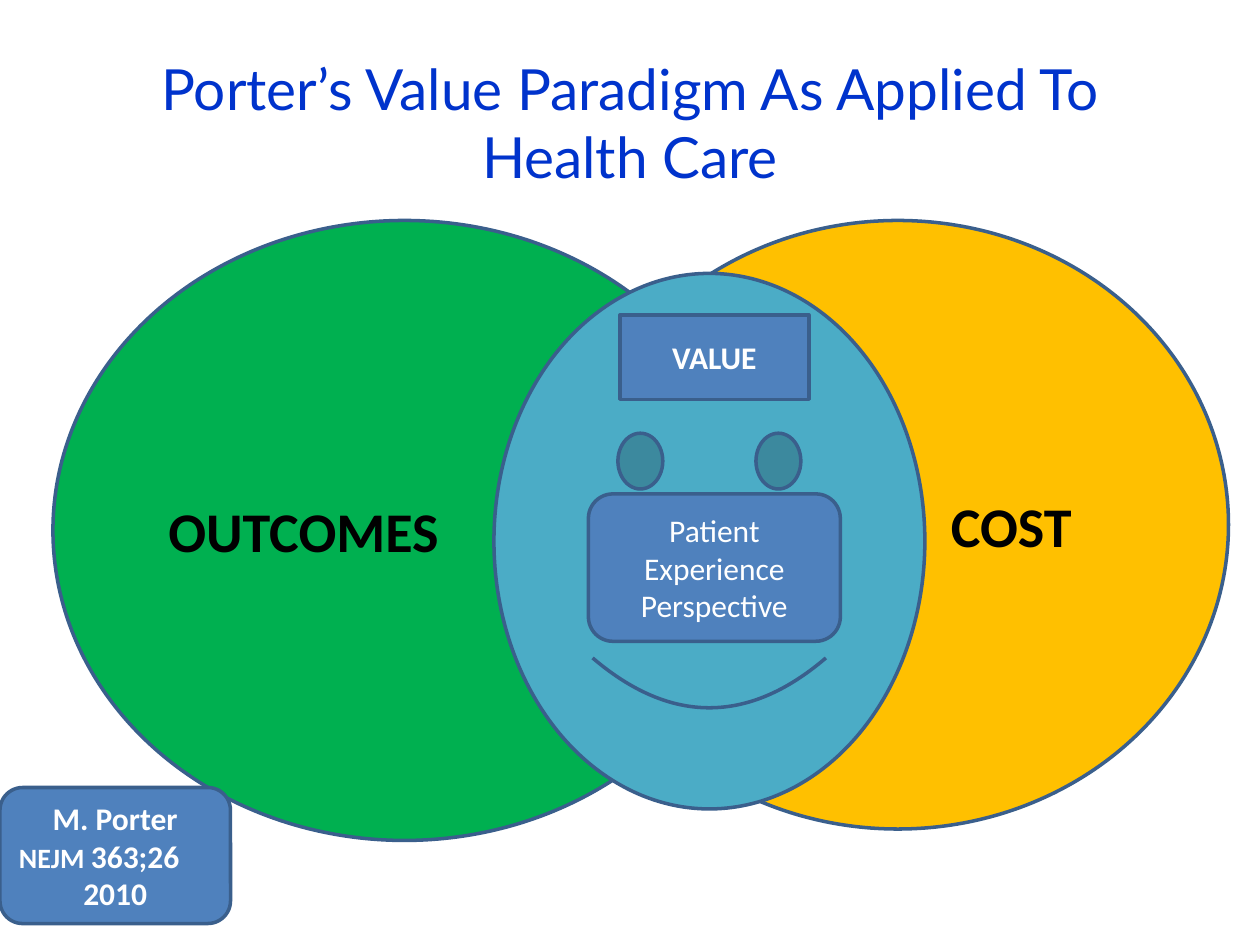
from pptx import Presentation
from pptx.dml.color import RGBColor
from pptx.enum.shapes import MSO_SHAPE
from pptx.enum.text import MSO_ANCHOR, PP_ALIGN
from pptx.util import Inches, Pt

OVAL = MSO_SHAPE.OVAL
FACE = MSO_SHAPE.SMILEY_FACE
RECTANGLE = MSO_SHAPE.RECTANGLE
ROUNDED = MSO_SHAPE.ROUNDED_RECTANGLE
LEFT, CENTER = PP_ALIGN.LEFT, PP_ALIGN.CENTER
MIDDLE = MSO_ANCHOR.MIDDLE

BLUE, OUTLINE, WHITE, BLACK = "4F81BD", "3A5F8C", "FFFFFF", "000000"


def color(value):
    return RGBColor.from_string(value)


def add_figure(page, kind, place, fill):
    figure = page.shapes.add_shape(kind, *map(Inches, place))
    figure.shadow.inherit = False
    figure.fill.solid()
    figure.fill.fore_color.rgb = color(fill)
    figure.line.color.rgb = color(OUTLINE)
    figure.line.width = Pt(2)
    return figure


def write(shape, lines, size, ink, bold=False, align=CENTER, font="Calibri"):
    frame = shape.text_frame
    frame.word_wrap = True
    frame.vertical_anchor = MIDDLE
    frame.text = "\n".join(lines)
    for para in frame.paragraphs:
        para.alignment = align
        para.font.name = font
        para.font.size = Pt(size)
        para.font.bold = bold
        para.font.color.rgb = color(ink)
    return frame


def add_title(page, text):
    box = page.shapes.add_textbox(*map(Inches, (0.5, 0.33, 9, 1.27)))
    write(box, [text], 32.4, "0033CC", font="Lato")


def add_circles(page):
    outcomes = add_figure(page, OVAL, (0.42, 1.75, 5.58, 4.92), "00B050")
    write(outcomes, ["OUTCOMES"], 32, BLACK, bold=True, align=LEFT)
    cost = add_figure(page, OVAL, (4.5, 1.75, 5.25, 4.83), "FFC000")
    frame = write(cost, ["COST"], 32, BLACK, bold=True)
    frame.margin_left = Inches(1.9)


def add_face(page):
    add_figure(page, FACE, (3.92, 2.17, 3.42, 4.25), "4BACC6")
    value = add_figure(page, RECTANGLE, (4.92, 2.5, 1.5, 0.67), BLUE)
    write(value, ["VALUE"], 18, WHITE, bold=True)
    patient = add_figure(page, ROUNDED, (4.67, 3.92, 2, 1.17), BLUE)
    write(patient, ["Patient Experience", "Perspective"], 18, WHITE)


def add_citation(page):
    citation = add_figure(page, ROUNDED, (0, 6.25, 1.83, 1.08), BLUE)
    frame = write(citation, ["M. Porter", "NEJM ", "2010"], 18, WHITE, bold=True)
    journal = frame.paragraphs[1]
    journal.alignment = LEFT
    journal.runs[0].font.size = Pt(16)
    journal.add_run().text = "363;26"


def main():
    deck = Presentation()
    deck.slide_width, deck.slide_height = Inches(10), Inches(7.5)
    page = deck.slides.add_slide(deck.slide_layouts[6])
    add_title(page, "Porter’s Value Paradigm As Applied To Health Care")
    add_circles(page)
    add_face(page)
    add_citation(page)
    deck.save("out.pptx")


if __name__ == "__main__":
    main()
